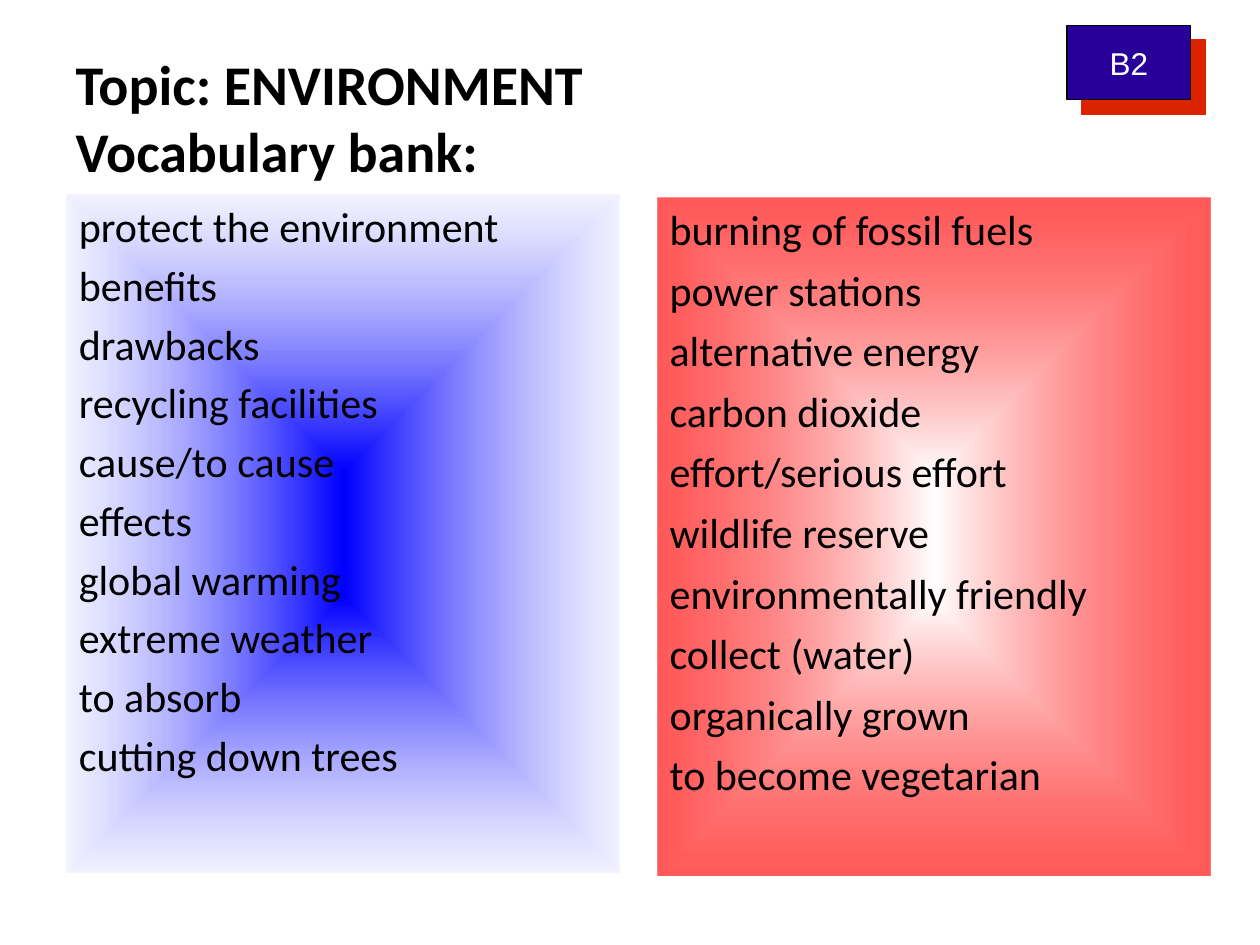
from lxml import etree
from pptx import Presentation
from pptx import util as u
from pptx.dml.color import RGBColor
from pptx.enum import shapes, text
from pptx.oxml.ns import qn

BLACK = RGBColor(0x00, 0x00, 0x00)
WHITE = RGBColor(0xFF, 0xFF, 0xFF)
BLUE = RGBColor(0x00, 0x00, 0xFF)
PALE_BLUE = RGBColor(0xE6, 0xE6, 0xFF)
RED = RGBColor(0xFF, 0x00, 0x00)
BADGE_FILL = RGBColor(0x28, 0x00, 0x99)
BADGE_SHADOW = RGBColor(0xDC, 0x23, 0x00)

LEFT_WORDS = [
    "protect the environment", "benefits", "drawbacks",
    "recycling facilities", "cause/to cause", "effects", "global warming",
    "extreme weather", "to absorb", "cutting down trees",
]
RIGHT_WORDS = [
    "burning of fossil fuels", "power stations", "alternative energy",
    "carbon dioxide", "effort/serious effort", "wildlife reserve",
    "environmentally friendly", "collect (water)", "organically grown",
    "to become vegetarian",
]


def add_span(para, words, size, font="Calibri", color=BLACK, bold=False):
    span = para.add_run()
    span.text = words
    span.font.size = u.Pt(size)
    span.font.name = font
    span.font.color.rgb = color
    span.font.bold = bold


def add_color(parent, color, alpha=100):
    node = etree.SubElement(parent, qn("a:srgbClr"), val=str(color))
    if alpha < 100:
        etree.SubElement(node, qn("a:alpha"), val=str(alpha * 1000))


def add_rectangle(page, left, top, width, height):
    box = page.shapes.add_shape(shapes.MSO_SHAPE.RECTANGLE, u.Pt(left),
                                u.Pt(top), u.Pt(width), u.Pt(height))
    box.shadow.inherit = False
    return box


def fill_from_center(box, center, edge, edge_alpha):
    """Gradient that runs from the middle of the box to its sides."""
    fill = etree.Element(qn("a:gradFill"), rotWithShape="1")
    stops = etree.SubElement(fill, qn("a:gsLst"))
    for place, color, alpha in ((0, center, 100), (100000, edge, edge_alpha)):
        add_color(etree.SubElement(stops, qn("a:gs"), pos=str(place)),
                  color, alpha)
    route = etree.SubElement(fill, qn("a:path"))
    route.set("path", "shape")
    etree.SubElement(route, qn("a:fillToRect"),
                     l="50000", t="50000", r="50000", b="50000")
    box._element.spPr.find(qn("a:prstGeom")).addnext(fill)


def add_title(page, lines):
    title = page.shapes.title
    title.left, title.top = u.Pt(36), u.Pt(18)
    title.width, title.height = u.Pt(648), u.Pt(97.2)
    frame = title.text_frame
    frame.auto_size = text.MSO_AUTO_SIZE.NONE
    frame.vertical_anchor = text.MSO_ANCHOR.MIDDLE
    para = frame.paragraphs[0]
    para.alignment = text.PP_ALIGN.LEFT
    for index, line in enumerate(lines):
        if index:
            para.add_line_break()
        add_span(para, line, 32, bold=True)


def add_word_panel(page, left, top, words, gap, center, edge, edge_alpha):
    box = add_rectangle(page, left, top, 316, 387.4)
    box.line.fill.background()
    fill_from_center(box, center, edge, edge_alpha)
    frame = box.text_frame
    frame.word_wrap = True
    frame.vertical_anchor = text.MSO_ANCHOR.TOP
    for index, word in enumerate(words):
        para = frame.add_paragraph() if index else frame.paragraphs[0]
        para.alignment = text.PP_ALIGN.LEFT
        para.space_before = u.Pt(gap if index else 0)
        add_span(para, word, 24)


def add_level_badge(page, label):
    box = add_rectangle(page, 609.8, 14.4, 70.6, 42.5)
    box.fill.solid()
    box.fill.fore_color.rgb = BADGE_FILL
    box.line.color.rgb = BLACK
    box.line.width = u.Pt(0.75)
    # Hard offset shadow, 45 degrees down to the right
    effects = box._element.spPr.find(qn("a:effectLst"))
    shadow = etree.SubElement(effects, qn("a:outerShdw"),
                              dist=str(u.Pt(12)), dir="2700000",
                              algn="ctr", rotWithShape="0")
    add_color(shadow, BADGE_SHADOW)
    frame = box.text_frame
    frame.word_wrap = False
    frame.vertical_anchor = text.MSO_ANCHOR.MIDDLE
    para = frame.paragraphs[0]
    para.alignment = text.PP_ALIGN.CENTER
    add_span(para, label, 18, font="Arial", color=WHITE)


def main():
    deck = Presentation()
    deck.slide_width, deck.slide_height = u.Pt(720), u.Pt(540)
    page = deck.slides.add_slide(deck.slide_layouts[5])

    # Heading
    add_title(page, ["Topic: ENVIRONMENT", "Vocabulary bank:"])
    # Vocabulary panels and level badge
    add_word_panel(page, 38, 111, LEFT_WORDS, 4.8, BLUE, PALE_BLUE, 50)
    add_level_badge(page, "B2")
    add_word_panel(page, 375.6, 112.8, RIGHT_WORDS, 5.8, WHITE, RED, 65)

    deck.save("out.pptx")


if __name__ == "__main__":
    main()
